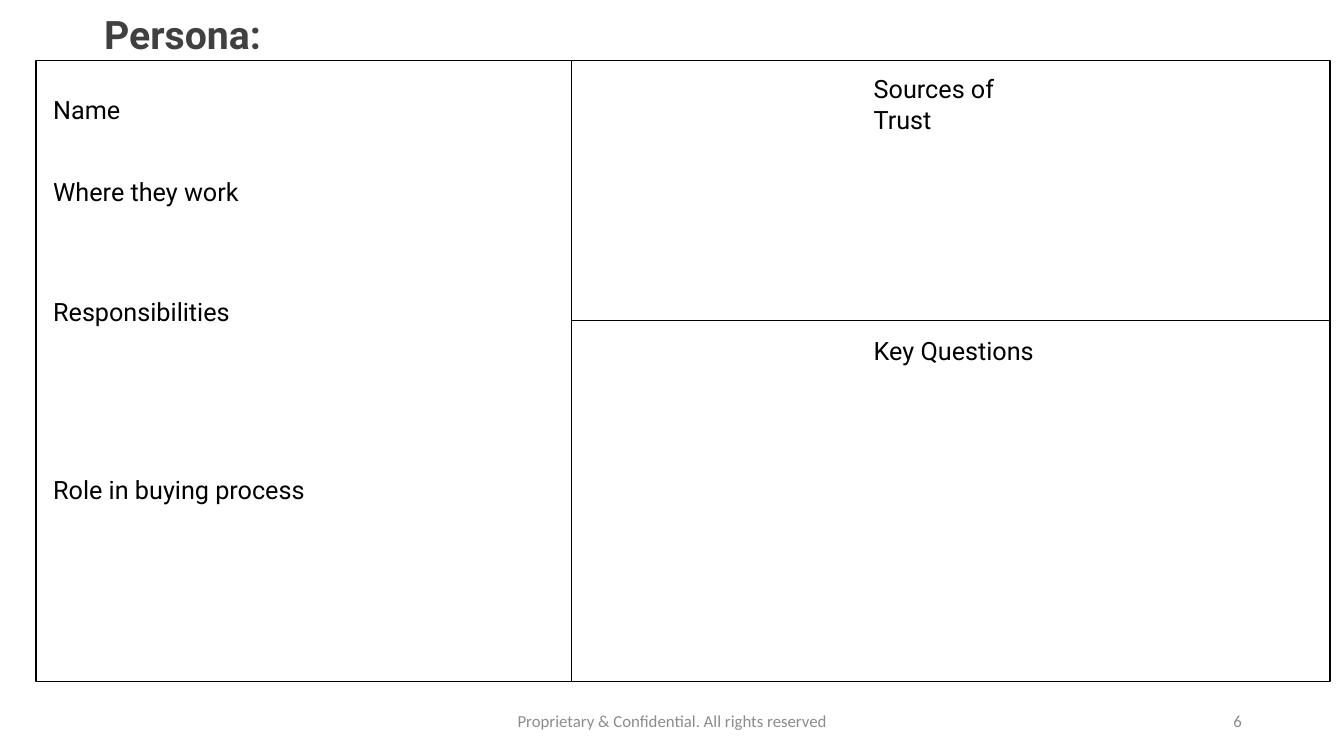
from collections import namedtuple

from lxml.etree import SubElement
from pptx import Presentation
from pptx.dml.color import RGBColor
from pptx.enum.shapes import MSO_CONNECTOR as Connector, MSO_SHAPE as Shape
from pptx.enum.text import MSO_ANCHOR as Anchor, MSO_AUTO_SIZE as AutoSize, PP_ALIGN as Align
from pptx.oxml.ns import qn
from pptx.util import Cm, Pt

COLORS = {"title": "404040", "text": "000000", "line": "000000", "footer": "8C8C8C"}
Box = namedtuple("Box", "left top width height")  # centimetres

LABEL_HEIGHT = 1.02
LEFT_COLUMN = 13.49
TOP_ROW = 6.56

# Label text, distance from the top of its region, width
PROFILE_LABELS = [
    ("Name", 0.72, 2.29),
    ("Where they work", 2.79, 5.46),
    ("Responsibilities", 5.82, 5.05),
    ("Role in buying process", 10.31, 7.14),
]


def color(name):
    return RGBColor.from_string(COLORS[name])


def style_text(frame, size, font, color_name, align, bold=False):
    for para in frame.paragraphs:
        para.alignment = align
        for span in para.runs:
            span.font.size = Pt(size)
            span.font.name = font
            span.font.bold = bold
            span.font.color.rgb = color(color_name)


def add_text(page, box, text):
    frame = page.shapes.add_textbox(*map(Cm, box)).text_frame
    frame.text = text
    return frame


def add_label(page, box, text):
    frame = add_text(page, box, text)
    style_text(frame, 18, "Roboto", "text", Align.LEFT)
    return frame


def add_rule(page, start, end):
    rule = page.shapes.add_connector(Connector.STRAIGHT, *map(Cm, start + end))
    rule.line.color.rgb = color("line")
    rule.line.width = Pt(0.5)
    SubElement(rule._element.spPr, qn("a:effectLst"))


def add_title(page, box):
    title = page.shapes.title
    title.left, title.top, title.width, title.height = map(Cm, box)
    frame = title.text_frame
    frame.text = "Persona:"
    frame.vertical_anchor = Anchor.MIDDLE
    frame.paragraphs[0].line_spacing = 0.9
    style_text(frame, 28, "Roboto", "title", Align.CENTER, bold=True)


def add_footer(page, box):
    parts = [
        ("Proprietary & Confidential. All rights reserved", 0, 11.43, Align.CENTER),
        ("6", 12.7, 7.62, Align.RIGHT),
    ]
    for text, offset, width, align in parts:
        frame = add_text(page, Box(box.left + offset, box.top, width, box.height), text)
        frame.word_wrap = True
        frame.vertical_anchor = Anchor.MIDDLE
        style_text(frame, 12, "Calibri", "footer", align)


def add_profile(page, box):
    for text, offset, width in PROFILE_LABELS:
        add_label(page, Box(box.left + 0.18, box.top + offset, width, LABEL_HEIGHT), text)


def add_topic(page, box, text, offset, width):
    label = Box(box.left + 7.37, box.top + offset, width, LABEL_HEIGHT)
    return add_label(page, label, text)


def add_canvas(page, box):
    middle = box.left + LEFT_COLUMN
    split = box.top + TOP_ROW
    right, bottom = box.left + box.width, box.top + box.height
    column = right - middle

    # Labels of the three regions
    add_profile(page, Box(box.left, box.top, LEFT_COLUMN, box.height))
    sources = add_topic(page, Box(middle, box.top, column, TOP_ROW),
                        "Sources of Trust", 0.21, 5.13)
    sources.word_wrap = True
    sources.auto_size = AutoSize.NONE
    sources.margin_right = Cm(1.2)
    add_topic(page, Box(middle, split, column, bottom - split), "Key Questions", 0.25, 4.7)

    # Frame and dividers
    frame = page.shapes.add_shape(Shape.RECTANGLE, *map(Cm, box))
    frame.shadow.inherit = False
    frame.fill.background()
    frame.line.color.rgb = color("line")
    frame.line.width = Pt(1)
    add_rule(page, (middle, box.top), (middle, bottom))
    add_rule(page, (right, split), (middle, split))


def main():
    deck = Presentation()
    deck.slide_width, deck.slide_height = Cm(33.87), Cm(19.05)
    page = deck.slides.add_slide(deck.slide_layouts[5])
    add_title(page, Box(-4.34, -0.91, 17.88, 3.68))
    add_footer(page, Box(11.23, 17.65, 20.32, 1.02))
    add_canvas(page, Box(0.91, 1.52, 32.61, 15.65))
    deck.save("out.pptx")


if __name__ == "__main__":
    main()
